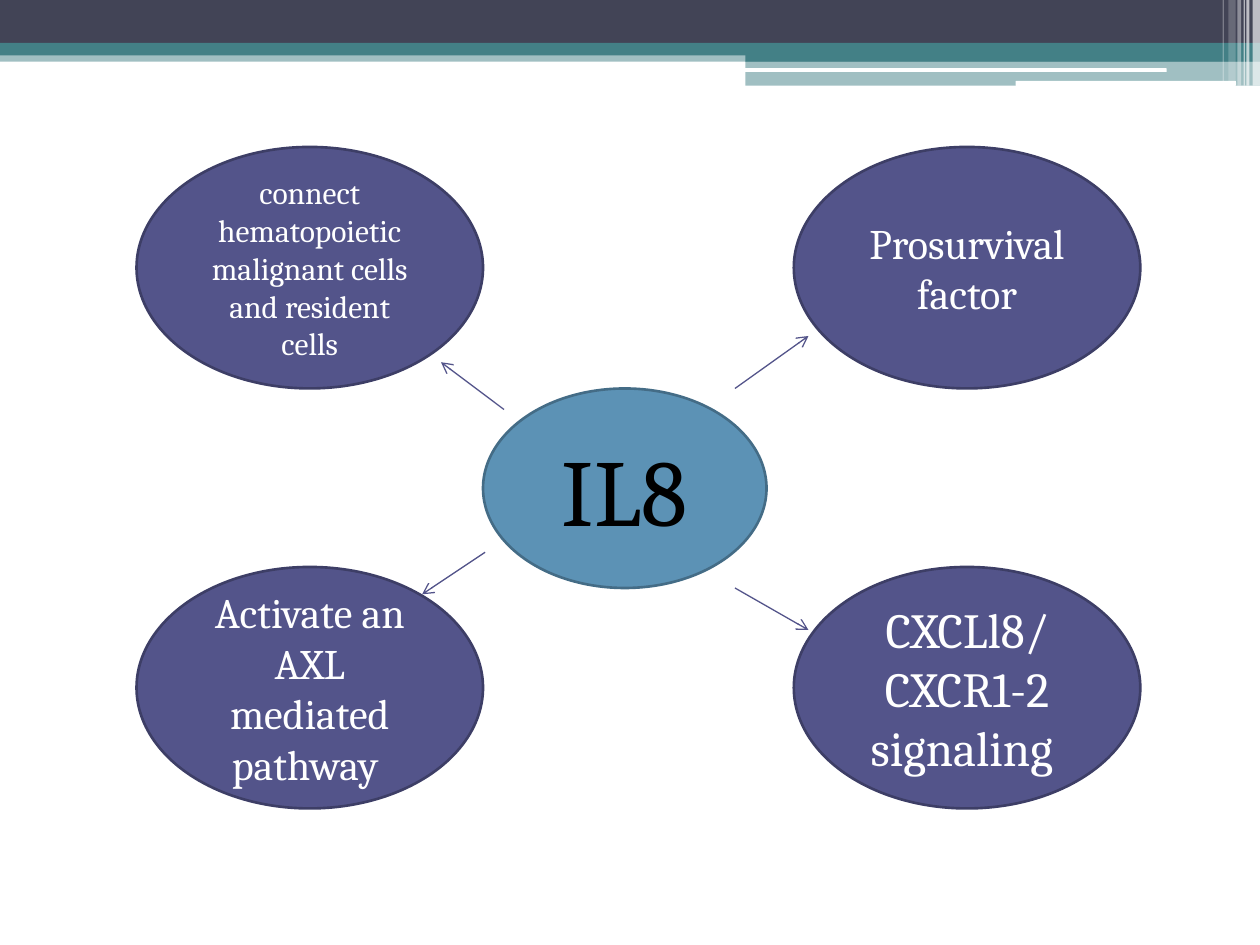
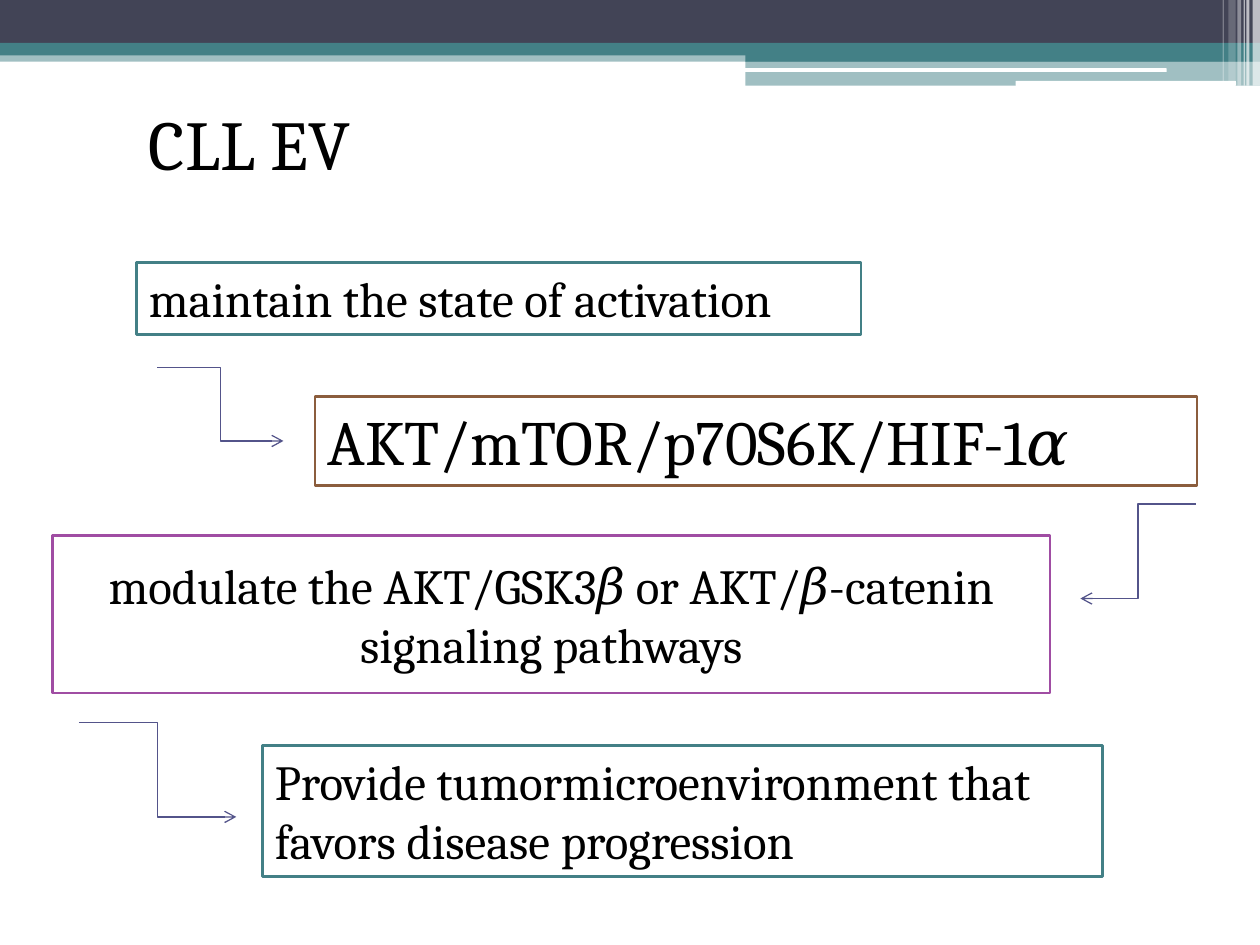
from lxml import etree
from pptx import Presentation
from pptx.dml.color import RGBColor
from pptx.enum.shapes import MSO_CONNECTOR, MSO_SHAPE
from pptx.enum.text import MSO_ANCHOR, PP_ALIGN
from pptx.oxml.ns import qn
from pptx.util import Inches, Pt

RECTANGLE, ROUNDED, ELLIPSE = MSO_SHAPE.RECTANGLE, MSO_SHAPE.ROUNDED_RECTANGLE, MSO_SHAPE.OVAL
STRAIGHT, ELBOW = MSO_CONNECTOR.STRAIGHT, MSO_CONNECTOR.ELBOW
LEFT, CENTER = PP_ALIGN.LEFT, PP_ALIGN.CENTER
TOP, MIDDLE = MSO_ANCHOR.TOP, MSO_ANCHOR.MIDDLE

WHITE = RGBColor(0xFF, 0xFF, 0xFF)
BLACK = RGBColor(0x00, 0x00, 0x00)
SLATE = RGBColor(0x42, 0x44, 0x56)
TEAL = RGBColor(0x43, 0x80, 0x86)
INDIGO = RGBColor(0x53, 0x54, 0x8A)
DARK_INDIGO = RGBColor(0x3D, 0x3E, 0x66)
BLUE = RGBColor(0x5C, 0x92, 0xB5)
DARK_BLUE = RGBColor(0x44, 0x6C, 0x86)
BROWN = RGBColor(0x8B, 0x5D, 0x3D)
PURPLE = RGBColor(0xA0, 0x4D, 0xA3)

FONT = "Cambria"
COLUMNS, ROWS = 120, 90  # square grid cells
WIDTH, HEIGHT = Inches(10), Inches(7.5)

# Header bands: left, top, width, height in grid cells, colour, opacity in percent
BANDS = [
    (0, 4.8, 120, 1.08, TEAL, 50),
    (0, 0, 120, 4.08, SLATE, 100),
    (0, 4.08, 120, 1.2, TEAL, 100),
    (71, 4.68, 49, 1.2, TEAL, 100),
    (71, 5.8, 49, 2.35, TEAL, 50),
]
HIGHLIGHTS = [(70.92, 6.5, 40.2, 0.36), (96.72, 7.7, 21, 0.48)]
# Vertical stripes: left, width, height, opacity in percent
STRIPES = [
    (119.3, 0.7, 8.15, 65),
    (118.7, 0.3, 8.15, 65),
    (118.45, 0.12, 8.15, 60),
    (117.85, 0.36, 8.15, 40),
    (117, 0.7, 7.7, 20),
    (116.45, 0.12, 7.7, 30),
]


class Deck:
    """Holds the presentation, its style and the current slide."""

    def __init__(self):
        self.presentation = Presentation()
        self.presentation.slide_width = WIDTH
        self.presentation.slide_height = HEIGHT
        self.slide = None

    def x(self, columns):
        return round(columns * WIDTH / COLUMNS)

    def y(self, rows):
        return round(rows * HEIGHT / ROWS)

    def frame(self, left, top, width, height):
        return self.x(left), self.y(top), self.x(width), self.y(height)

    def new_slide(self):
        self.slide = self.presentation.slides.add_slide(self.presentation.slide_layouts[6])
        for *place, color, opacity in BANDS:
            self.shape(RECTANGLE, place, color, opacity=opacity)
        for place in HIGHLIGHTS:
            self.shape(ROUNDED, place, WHITE)
        for left, width, height, opacity in STRIPES:
            self.shape(RECTANGLE, (left, 0, width, height), WHITE, opacity=opacity)

    def shape(self, kind, place, fill, outline=None, opacity=100):
        shape = self.slide.shapes.add_shape(kind, *self.frame(*place))
        shape.shadow.inherit = False
        shape.fill.solid()
        shape.fill.fore_color.rgb = fill
        if opacity < 100:
            color = shape.element.xpath("./p:spPr/a:solidFill/a:srgbClr")[0]
            etree.SubElement(color, qn("a:alpha"), val=str(opacity * 1000))
        if outline is None:
            shape.line.fill.background()
        else:
            shape.line.color.rgb = outline
            shape.line.width = Pt(1.5)
        return shape

    def add_text(self, shape, text, size, color=BLACK, align=LEFT, anchor=TOP):
        frame = shape.text_frame
        frame.word_wrap = True
        frame.vertical_anchor = anchor
        paragraph = frame.paragraphs[0]
        paragraph.alignment = align
        run = paragraph.add_run()
        run.text = text
        run.font.name = FONT
        run.font.size = Pt(size)
        run.font.color.rgb = color

    def title(self, text, place):
        self.add_text(self.slide.shapes.add_textbox(*self.frame(*place)), text, 40)

    def bubble(self, text, size, place, fill=INDIGO, outline=DARK_INDIGO, color=WHITE):
        self.add_text(self.shape(ELLIPSE, place, fill, outline), text, size, color, CENTER, MIDDLE)

    def box(self, text, size, place, outline, align=LEFT, anchor=TOP):
        self.add_text(self.shape(RECTANGLE, place, WHITE, outline), text, size, BLACK, align, anchor)

    def arrow(self, kind, start, end):
        connector = self.slide.shapes.add_connector(
            kind, self.x(start[0]), self.y(start[1]), self.x(end[0]), self.y(end[1]))
        connector.line.color.rgb = INDIGO
        connector.line.width = Pt(0.75)
        properties = connector.element.spPr
        etree.SubElement(properties.find(qn("a:ln")), qn("a:tailEnd"), type="arrow")
        etree.SubElement(properties, qn("a:effectLst"))


def add_il8_slide(deck):
    deck.new_slide()
    deck.bubble("IL8", 54, (46, 37, 27, 19), BLUE, DARK_BLUE, BLACK)

    # Four roles around the centre
    left, right, upper, lower = 13, 75.6, 14, 54
    roles = [
        ("CXCLl8/CXCR1-2 signaling ", 28, right, lower),
        ("Activate an AXL mediated pathway ", 24, left, lower),
        ("Prosurvival factor", 24, right, upper),
        ("connect hematopoietic malignant cells and resident cells", 18, left, upper),
    ]
    for text, size, column, row in roles:
        deck.bubble(text, size, (column, row, 33, 23))

    # Arrows from the centre outwards
    for start, end in [
        ((70, 37), (77, 32)),
        ((70, 56), (77, 60)),
        ((48, 39), (42, 34.5)),
        ((46.2, 52.6), (40.2, 56.6)),
    ]:
        deck.arrow(STRAIGHT, start, end)


def add_cll_ev_slide(deck):
    deck.new_slide()
    deck.title("CLL EV", (13, 9, 53, 9.2))

    # Steps of the cascade
    deck.box("maintain the state of activation", 28, (13, 25, 69, 6.85), TEAL)
    deck.box("AKT/mTOR/p70S6K/HIF-1𝛼", 36, (30, 37.75, 84, 8.5), BROWN)
    deck.box("modulate the AKT/GSK3𝛽 or AKT/𝛽-catenin signaling pathways", 28,
             (5, 51, 95, 15), PURPLE, CENTER, MIDDLE)
    deck.box("Provide tumormicroenvironment that favors disease progression", 28,
             (25, 71, 80, 12.5), TEAL)

    # Bent arrows from step to step
    for start, end in [
        ((15, 35), (27, 42)),
        ((113.9, 48), (102.9, 57)),
        ((7.5, 68.8), (22.5, 77.8)),
    ]:
        deck.arrow(ELBOW, start, end)


def main():
    deck = Deck()
    add_il8_slide(deck)
    add_cll_ev_slide(deck)
    deck.presentation.save("out.pptx")


if __name__ == "__main__":
    main()
